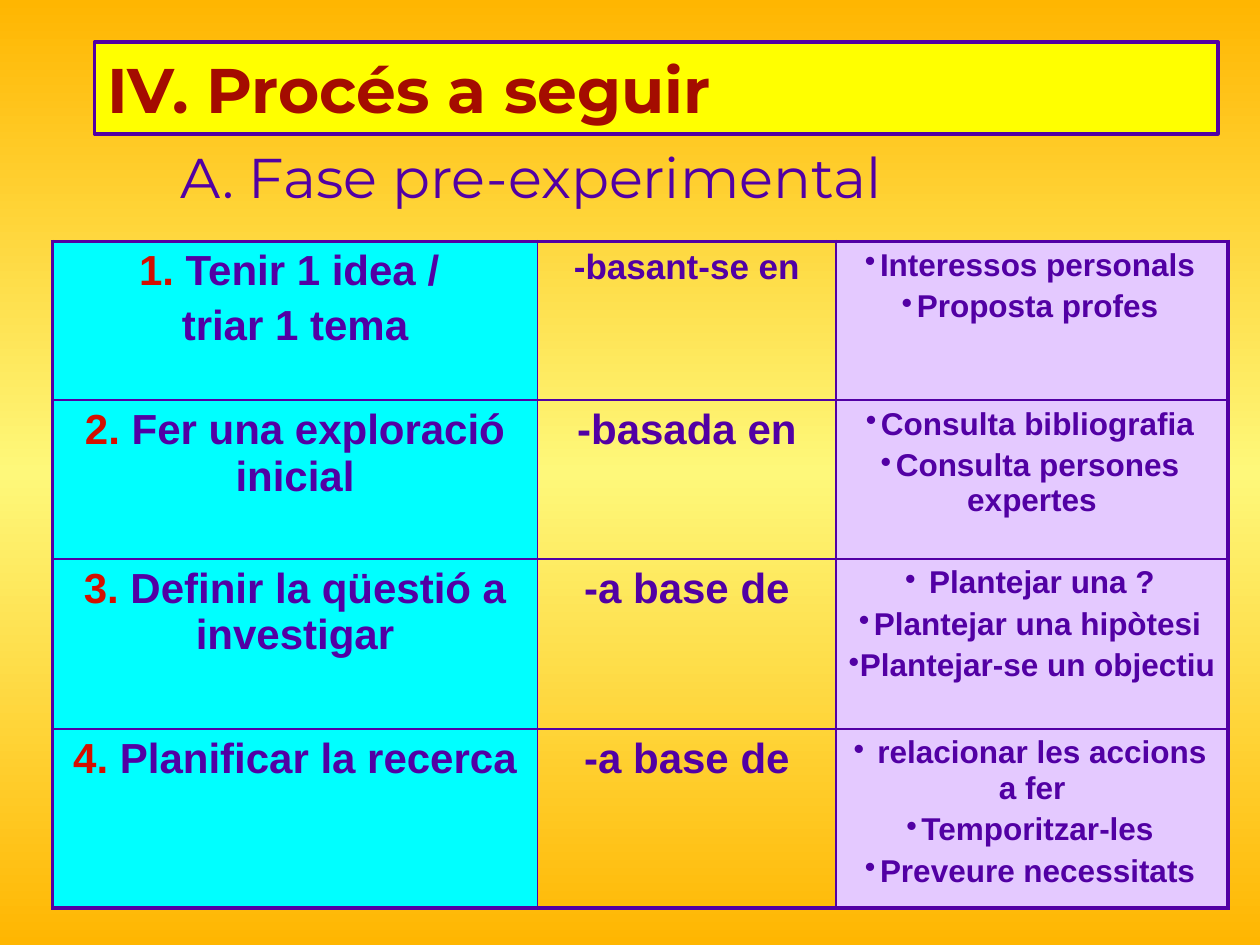
"""Build the slide on the pre-experimental phase of a research process."""
import copy

import lxml.etree
import pptx
import pptx.dml.color
import pptx.enum.text
import pptx.oxml.ns
import pptx.util

Pt = pptx.util.Pt
RGBColor = pptx.dml.color.RGBColor
qn = pptx.oxml.ns.qn

PURPLE = RGBColor(0x52, 0x00, 0xA4)
DARK_RED = RGBColor(0xA4, 0x0C, 0x00)
RED = RGBColor(0xD4, 0x0F, 0x00)
YELLOW = RGBColor(0xFF, 0xFF, 0x00)
CYAN = RGBColor(0x00, 0xFF, 0xFF)
LILAC = RGBColor(0xE4, 0xC9, 0xFF)
ORANGE = RGBColor(0xFF, 0xB6, 0x01)
PALE_YELLOW = RGBColor(0xFE, 0xF8, 0x7A)

COLUMN_WIDTHS = [277.2, 170.6, 223.9]
ROW_HEIGHTS = [90.7, 90.7, 97.2, 102.2]
STEPS = [
    ("1.", [" Tenir 1 idea / ", "triar 1 tema"], "-basant-se en", 20,
     ["Interessos personals", "Proposta profes"]),
    ("2.", [" Fer una exploració inicial"], "-basada en", 24,
     ["Consulta bibliografia", "Consulta persones expertes"]),
    ("3.", [" Definir la qüestió a investigar"], "-a base de", 24,
     [" Plantejar una ?", "Plantejar una hipòtesi", "Plantejar-se un objectiu"]),
    ("4.", [" Planificar la recerca"], "-a base de", 24,
     [" relacionar les accions a fer", "Temporitzar-les", "Preveure necessitats"]),
]


def add_run(paragraph, text, size, color=PURPLE, bold=True, font="Arial"):
    run = paragraph.add_run()
    run.text = text
    run.font.size = Pt(size)
    run.font.name = font
    run.font.bold = bold
    run.font.color.rgb = color


def fill_cell(cell, lines, size, number="", bulleted=False):
    frame = cell.text_frame
    for index, line in enumerate(lines):
        paragraph = frame.add_paragraph() if index else frame.paragraphs[0]
        paragraph.alignment = pptx.enum.text.PP_ALIGN.CENTER
        if index:
            paragraph.space_before = Pt(size * 0.2)
        elif number:
            add_run(paragraph, number, size, RED)
        add_run(paragraph, line, size)
        if bulleted:
            properties = paragraph._p.get_or_add_pPr()
            properties.set("marL", "0")
            properties.set("indent", str(Pt(-8.64)))
            color = lxml.etree.SubElement(properties, qn("a:buClr"))
            lxml.etree.SubElement(color, qn("a:srgbClr"), val=str(PURPLE))
            lxml.etree.SubElement(properties, qn("a:buChar"), char="•")


presentation = pptx.Presentation()
presentation.slide_width = Pt(720)
presentation.slide_height = Pt(540)
slide = presentation.slides.add_slide(presentation.slide_layouts[5])

background = slide.background.fill
background.gradient()
background.gradient_angle = 90
stop_list = slide._element.find(".//" + qn("a:gsLst"))
stop_list.append(copy.deepcopy(stop_list[0]))
for stop, position, color in zip(background.gradient_stops, (0, 0.5, 1),
                                 (ORANGE, PALE_YELLOW, ORANGE)):
    stop.position = position
    stop.color.rgb = color

title = slide.shapes.title
title.left, title.top, title.width, title.height = Pt(54), Pt(24), Pt(642), Pt(52.5)
title.fill.solid()
title.fill.fore_color.rgb = YELLOW
title.line.color.rgb = PURPLE
title.line.width = Pt(2)
title.text_frame.auto_size = pptx.enum.text.MSO_AUTO_SIZE.NONE
title_paragraph = title.text_frame.paragraphs[0]
title_paragraph.alignment = pptx.enum.text.PP_ALIGN.LEFT
add_run(title_paragraph, "IV. Procés a seguir", 36, DARK_RED, font="Montserrat")

table = slide.shapes.add_table(4, 3, Pt(30), Pt(138), Pt(sum(COLUMN_WIDTHS)),
                               Pt(sum(ROW_HEIGHTS))).table
table.first_row = False
table.horz_banding = False
for column, width in zip(table.columns, COLUMN_WIDTHS):
    column.width = Pt(width)
for row, height in zip(table.rows, ROW_HEIGHTS):
    row.height = Pt(height)

for row_index, (number, step, link, link_size, details) in enumerate(STEPS):
    step_cell, link_cell, detail_cell = table.rows[row_index].cells
    fill_cell(step_cell, step, 24, number=number)
    fill_cell(link_cell, [link], link_size)
    fill_cell(detail_cell, details, 18, bulleted=True)
    link_cell.fill.background()
    for cell, color in ((step_cell, CYAN), (detail_cell, LILAC)):
        cell.fill.solid()
        cell.fill.fore_color.rgb = color

    for column_index, cell in enumerate((step_cell, link_cell, detail_cell)):
        outer_sides = {
            "a:lnL": column_index == 0,
            "a:lnR": column_index == len(COLUMN_WIDTHS) - 1,
            "a:lnT": row_index == 0,
            "a:lnB": row_index == len(STEPS) - 1,
        }
        for position, (side, is_outer) in enumerate(outer_sides.items()):
            border = lxml.etree.Element(qn(side), w=str(Pt(2.25 if is_outer else 1)))
            solid = lxml.etree.SubElement(border, qn("a:solidFill"))
            lxml.etree.SubElement(solid, qn("a:srgbClr"), val=str(PURPLE))
            cell._tc.get_or_add_tcPr().insert(position, border)

subtitle = slide.shapes.add_textbox(Pt(96), Pt(78), Pt(492), Pt(45.5))
subtitle.text_frame.word_wrap = True
add_run(subtitle.text_frame.paragraphs[0], "A. Fase pre-experimental", 32,
        bold=False, font="Montserrat")

presentation.save("out.pptx")
